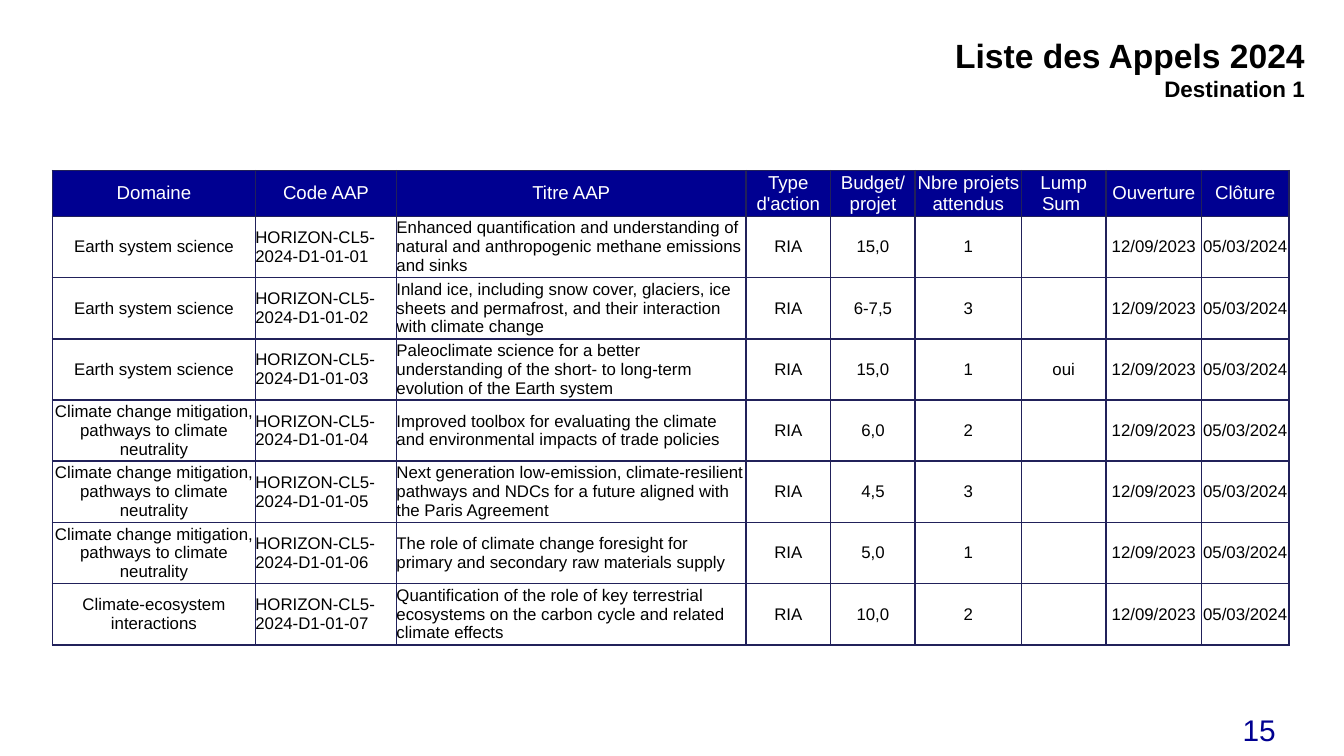
from dataclasses import dataclass

from lxml import etree
from pptx import Presentation
from pptx import util as u
from pptx.dml.color import RGBColor
from pptx.enum import text
from pptx.oxml import ns

FONT = "Arial"
COLORS = {"navy": "000091", "border": "21215A", "black": "000000", "white": "FFFFFF"}
CENTER, LEFT, RIGHT = text.PP_ALIGN.CENTER, text.PP_ALIGN.LEFT, text.PP_ALIGN.RIGHT
SLIDE_WIDTH = 10
SLIDE_HEIGHT = SLIDE_WIDTH * 9 / 16
TABLE_LEFT, TABLE_TOP, TABLE_HEIGHT, HEADER_HEIGHT = 0.39, 1.27, 3.53, 0.34


@dataclass
class Column:
    heading: str
    width: float
    align: text.PP_ALIGN = CENTER


@dataclass
class Call:
    domain: str
    title: str
    budget: str
    projects: str
    lump_sum: str = ""


COLUMNS = [
    Column("Domaine", 1.51),
    Column("Code AAP", 1.05, LEFT),
    Column("Titre AAP", 2.6, LEFT),
    Column("Type d'action", 0.63),
    Column("Budget/ projet", 0.63),
    Column("Nbre projets attendus", 0.79),
    Column("Lump Sum ", 0.63),
    Column("Ouverture", 0.71),
    Column("Clôture", 0.65),
]

EARTH = "Earth system science"
MITIGATION = "Climate change mitigation, pathways to climate neutrality"
CALLS = [
    Call(EARTH, "Enhanced quantification and understanding of natural and "
         "anthropogenic methane emissions and sinks", "15,0", "1"),
    Call(EARTH, "Inland ice, including snow cover, glaciers, ice sheets and permafrost, "
         "and their interaction with climate change", "6-7,5", "3"),
    Call(EARTH, "Paleoclimate science for a better understanding of the short- to "
         "long-term evolution of the Earth system", "15,0", "1", "oui"),
    Call(MITIGATION, "Improved toolbox for evaluating the climate and environmental "
         "impacts of trade policies", "6,0", "2"),
    Call(MITIGATION, "Next generation low-emission, climate-resilient pathways and NDCs "
         "for a future aligned with the Paris Agreement", "4,5", "3"),
    Call(MITIGATION, "The role of climate change foresight for primary and secondary "
         "raw materials supply", "5,0", "1"),
    Call("Climate-ecosystem interactions", "Quantification of the role of key terrestrial "
         "ecosystems on the carbon cycle and related climate effects", "10,0", "2"),
]


def rgb(name: str) -> RGBColor:
    return RGBColor.from_string(COLORS[name])


def format_paragraph(paragraph, size: float, color: str, align, bold: bool = False) -> None:
    paragraph.alignment = align
    font = paragraph.font
    font.name, font.size, font.bold = FONT, u.Pt(size), bold
    font.color.rgb = rgb(color)


def add_borders(cell) -> None:
    properties = cell._tc.get_or_add_tcPr()
    for position, side in enumerate(("a:lnL", "a:lnR", "a:lnT", "a:lnB")):
        line = etree.Element(ns.qn(side), w=str(u.Pt(1)))
        fill = etree.SubElement(line, ns.qn("a:solidFill"))
        etree.SubElement(fill, ns.qn("a:srgbClr"), val=COLORS["border"])
        properties.insert(position, line)


def fill_cell(cell, content: str, align, header: bool) -> None:
    cell.text = content
    cell.margin_left = cell.margin_right = cell.margin_top = cell.margin_bottom = 0
    cell.vertical_anchor = text.MSO_ANCHOR.MIDDLE
    if header:
        cell.fill.solid()
        cell.fill.fore_color.rgb = rgb("navy")
        format_paragraph(cell.text_frame.paragraphs[0], 10, "white", CENTER)
    else:
        cell.fill.background()
        format_paragraph(cell.text_frame.paragraphs[0], 9, "black", align)
    add_borders(cell)


def add_title(slide) -> None:
    title = slide.shapes.title
    title.left, title.top = u.Inches(3.5), u.Inches(0.21)
    title.width, title.height = u.Inches(6.31), u.Inches(0.61)
    frame = title.text_frame
    frame.auto_size = text.MSO_AUTO_SIZE.NONE
    frame.vertical_anchor = text.MSO_ANCHOR.TOP
    frame.text = "Liste des Appels 2024\nDestination 1"
    for paragraph, size in zip(frame.paragraphs, (18, 12)):
        format_paragraph(paragraph, size, "black", RIGHT, bold=True)


def add_calls_table(slide) -> None:
    rows = [[column.heading for column in COLUMNS]]
    for number, call in enumerate(CALLS, start=1):
        rows.append([call.domain, f"HORIZON-CL5-2024-D1-01-{number:02}", call.title, "RIA",
                     call.budget, call.projects, call.lump_sum, "12/09/2023", "05/03/2024"])

    table = slide.shapes.add_table(
        len(rows), len(COLUMNS), u.Inches(TABLE_LEFT), u.Inches(TABLE_TOP),
        u.Inches(sum(column.width for column in COLUMNS)), u.Inches(TABLE_HEIGHT)).table
    table.first_row = table.horz_banding = False
    for index, column in enumerate(COLUMNS):
        table.columns[index].width = u.Inches(column.width)
    call_height = (TABLE_HEIGHT - HEADER_HEIGHT) / len(CALLS)
    for row_index, row in enumerate(rows):
        header = row_index == 0
        table.rows[row_index].height = u.Inches(HEADER_HEIGHT if header else call_height)
        for column_index, content in enumerate(row):
            fill_cell(table.cell(row_index, column_index), content,
                      COLUMNS[column_index].align, header)


def add_page_number(slide) -> None:
    box = slide.shapes.add_textbox(u.Inches(8.31), u.Inches(5.23), u.Inches(1.28), u.Inches(0.39))
    frame = box.text_frame
    frame.word_wrap = True
    frame.vertical_anchor = text.MSO_ANCHOR.MIDDLE
    frame.text = "15"
    format_paragraph(frame.paragraphs[0], 16, "navy", RIGHT)


def main() -> None:
    presentation = Presentation()
    presentation.slide_width = u.Inches(SLIDE_WIDTH)
    presentation.slide_height = u.Inches(SLIDE_HEIGHT)
    slide = presentation.slides.add_slide(presentation.slide_layouts[5])
    add_page_number(slide)
    add_title(slide)
    add_calls_table(slide)
    presentation.save("out.pptx")


if __name__ == "__main__":
    main()
